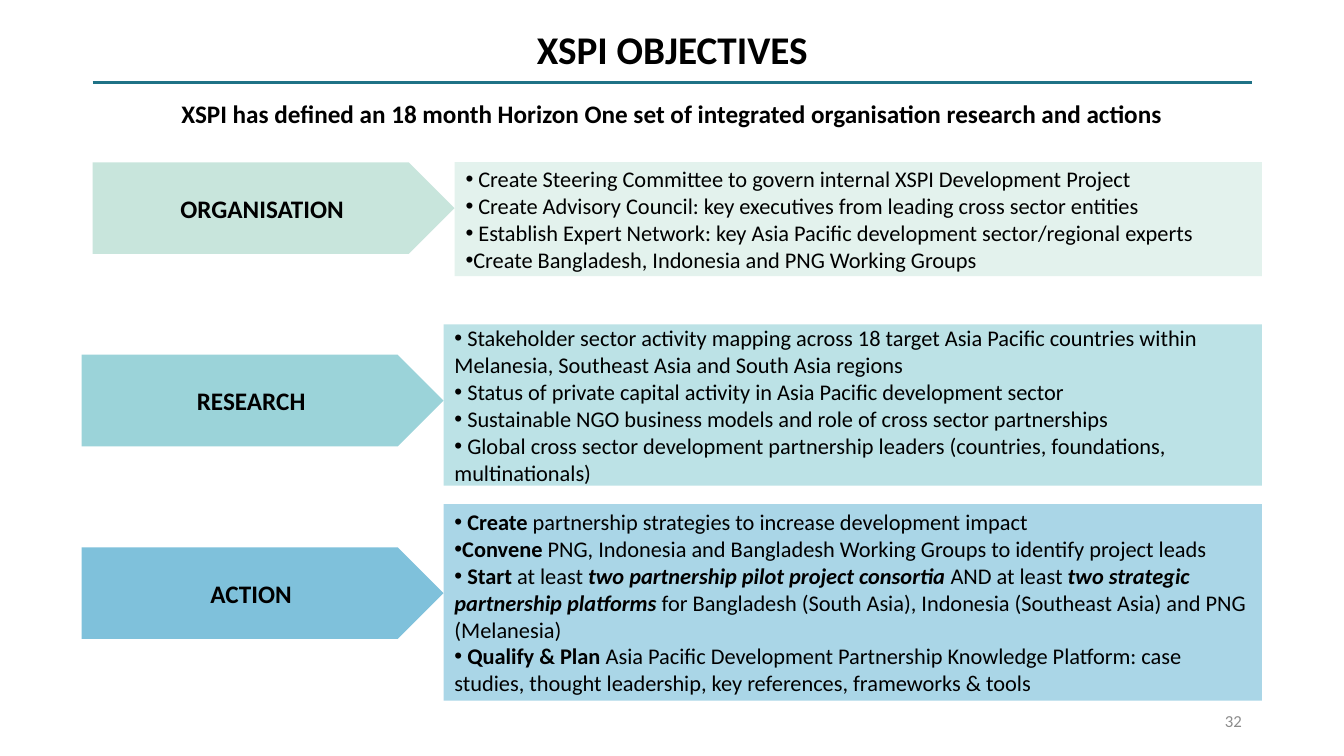
from lxml import etree
from pptx import Presentation
from pptx.dml.color import RGBColor
from pptx.enum.shapes import MSO_CONNECTOR, MSO_SHAPE
from pptx.enum.text import MSO_ANCHOR, MSO_AUTO_SIZE, PP_ALIGN
from pptx.oxml.ns import qn
from pptx.util import Pt

LEFT, CENTER, RIGHT = PP_ALIGN.LEFT, PP_ALIGN.CENTER, PP_ALIGN.RIGHT
MIDDLE, TOP = MSO_ANCHOR.MIDDLE, MSO_ANCHOR.TOP
RECTANGLE, ARROW = MSO_SHAPE.RECTANGLE, MSO_SHAPE.PENTAGON
STRAIGHT, NO_FIT = MSO_CONNECTOR.STRAIGHT, MSO_AUTO_SIZE.NONE

BLACK = RGBColor(0x00, 0x00, 0x00)
GREY = RGBColor(0x8C, 0x8C, 0x8C)
TEAL = RGBColor(0x1F, 0x72, 0x86)
MINT, PALE_MINT = RGBColor(0xC8, 0xE5, 0xDC), RGBColor(0xE3, 0xF2, 0xED)
AQUA, PALE_AQUA = RGBColor(0x9B, 0xD3, 0xD9), RGBColor(0xBC, 0xE2, 0xE6)
BLUE, PALE_BLUE = RGBColor(0x7F, 0xC1, 0xDB), RGBColor(0xAA, 0xD6, 0xE7)

PLAIN, BOLD, BOLD_ITALIC = (False, False), (True, False), (True, True)

PANEL_RIGHT = 901.4
ARROW_TOP, ARROW_STEP = 115.9, 137.5
ARROW_WIDTH, ARROW_HEIGHT = 258.5, 65.5

OBJECTIVES = [
    ("ORGANISATION", MINT, PALE_MINT, (324.7, 115.9, 81.4), [
        [(" Create Steering Committee to govern internal XSPI Development Project", PLAIN)],
        [(" Create Advisory Council: key executives from leading cross sector entities", PLAIN)],
        [(" Establish Expert Network: key Asia Pacific development sector/regional experts", PLAIN)],
        [("Create Bangladesh, Indonesia and PNG Working Groups", PLAIN)],
    ]),
    ("RESEARCH", AQUA, PALE_AQUA, (316.8, 231.8, 115.2), [
        [(" Stakeholder sector activity mapping across 18 target Asia Pacific countries within "
          "Melanesia, Southeast Asia and South Asia regions", PLAIN)],
        [(" Status of private capital activity in Asia Pacific development sector", PLAIN)],
        [(" Sustainable NGO business models and role of cross sector partnerships", PLAIN)],
        [(" Global cross sector development partnership leaders (countries, foundations, "
          "multinationals)", PLAIN)],
    ]),
    ("ACTION", BLUE, PALE_BLUE, (316.8, 360, 140.4), [
        [(" Create", BOLD), (" partnership strategies to increase development impact", PLAIN)],
        [("Convene", BOLD),
         (" PNG, Indonesia and Bangladesh Working Groups to identify project leads", PLAIN)],
        [(" Start", BOLD), (" at least ", PLAIN),
         ("two partnership pilot project consortia ", BOLD_ITALIC), ("AND at least ", PLAIN),
         ("two strategic partnership platforms ", BOLD_ITALIC),
         ("for Bangladesh (South Asia), Indonesia (Southeast Asia) and PNG (Melanesia)", PLAIN)],
        [(" Qualify & Plan", BOLD),
         (" Asia Pacific Development Partnership Knowledge Platform: case studies, "
          "thought leadership, key references, frameworks & tools", PLAIN)],
    ]),
]


class SlideBuilder:
    """Holds the text style and the current slide, and adds elements to it."""

    def __init__(self, page, font_name="Calibri"):
        self.page = page
        self.font_name = font_name

    def style(self, para, size, bold=None, color=BLACK, align=CENTER):
        para.alignment = align
        para.font.name = self.font_name
        para.font.size = Pt(size)
        para.font.color.rgb = color
        if bold is not None:
            para.font.bold = bold

    def title(self, text, left, top, width, height):
        box = self.page.shapes.title
        box.left, box.top, box.width, box.height = Pt(left), Pt(top), Pt(width), Pt(height)
        frame = box.text_frame
        frame.text = text
        frame.auto_size = NO_FIT
        frame.vertical_anchor = MIDDLE
        para = frame.paragraphs[0]
        para.line_spacing = 0.9
        self.style(para, 28, True)

    def rule(self, left, right, y):
        line = self.page.shapes.add_connector(STRAIGHT, Pt(left), Pt(y), Pt(right), Pt(y))
        line.line.color.rgb = TEAL
        line.line.width = Pt(2.25)
        etree.SubElement(line.element.spPr, qn("a:effectLst"))

    def label(self, text, left, top, width, height, size, bold, color, align, anchor):
        frame = self.page.shapes.add_textbox(Pt(left), Pt(top), Pt(width), Pt(height)).text_frame
        frame.word_wrap = True
        frame.vertical_anchor = anchor
        frame.text = text
        self.style(frame.paragraphs[0], size, bold, color, align)

    def block(self, kind, left, top, width, height, fill):
        box = self.page.shapes.add_shape(kind, Pt(left), Pt(top), Pt(width), Pt(height))
        box.shadow.inherit = False
        box.fill.solid()
        box.fill.fore_color.rgb = fill
        box.line.fill.background()
        box.text_frame.word_wrap = True
        box.text_frame.vertical_anchor = MIDDLE
        return box.text_frame

    def arrow(self, text, left, top, fill):
        frame = self.block(ARROW, left, top, ARROW_WIDTH, ARROW_HEIGHT, fill)
        frame.text = text
        self.style(frame.paragraphs[0], 18, True)

    def panel(self, items, left, top, height, fill):
        frame = self.block(RECTANGLE, left, top, PANEL_RIGHT - left, height, fill)
        for index, spans in enumerate(items):
            para = frame.add_paragraph() if index else frame.paragraphs[0]
            properties = para._p.get_or_add_pPr()
            properties.set("marL", str(Pt(0.75)))
            properties.set("indent", "0")
            etree.SubElement(properties, qn("a:buFont"), typeface="Arial")
            etree.SubElement(properties, qn("a:buChar"), char="•")
            self.style(para, 16, align=LEFT)
            for text, (bold, italic) in spans:
                span = para.add_run()
                span.text = text
                span.font.bold, span.font.italic = bold, italic


def main():
    deck = Presentation()
    deck.slide_width, deck.slide_height = Pt(960), Pt(540)
    builder = SlideBuilder(deck.slides.add_slide(deck.slide_layouts[5]))
    builder.title("XSPI OBJECTIVES", 66.2, 7.9, 828, 57.6)
    builder.rule(66.2, 894.2, 59)
    builder.label("XSPI has defined an 18 month Horizon One set of integrated organisation "
                  "research and actions", 109.4, 67, 741, 29, 18, True, BLACK, CENTER, TOP)
    for index, (name, arrow_fill, panel_fill, place, items) in enumerate(OBJECTIVES):
        left, top, height = place
        builder.panel(items, left, top, height, panel_fill)
        builder.arrow(name, left - ARROW_WIDTH, ARROW_TOP + index * ARROW_STEP, arrow_fill)
    builder.label("32", 678.2, 500.4, 216, 28.8, 12, False, GREY, RIGHT, MIDDLE)
    deck.save("out.pptx")


if __name__ == "__main__":
    main()
